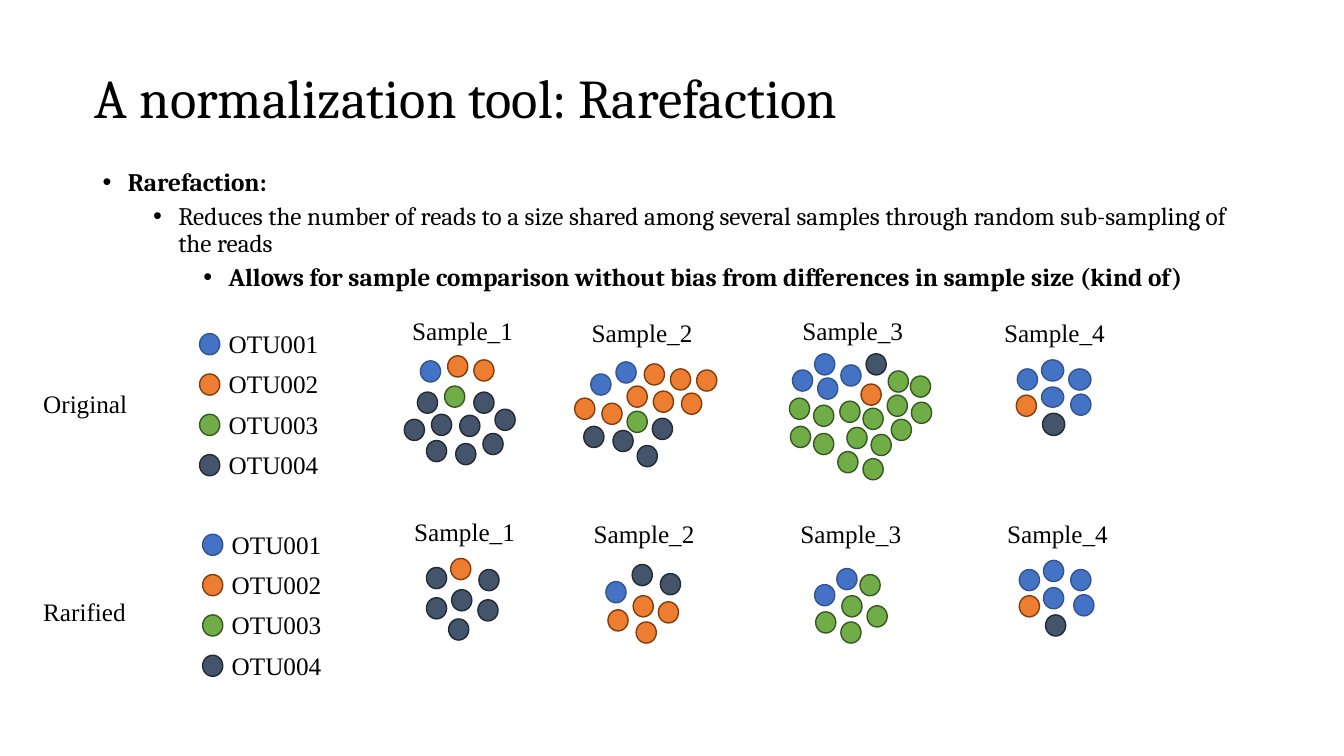
"""Build the slide that explains rarefaction with samples of coloured OTU dots."""

import dataclasses
import typing

import lxml.etree
import pptx
import pptx.dml.color
import pptx.enum.shapes
import pptx.enum.text
import pptx.oxml.ns
import pptx.util

SLIDE_WIDTH = pptx.util.Inches(13.33)
SLIDE_HEIGHT = pptx.util.Inches(7.5)
COLUMNS = 133.3
ROWS = 75


@dataclasses.dataclass(frozen=True)
class Theme:
    """Hold the colours, fonts and type sizes of the slide."""

    ink: str = "000000"
    heading_font: str = "Cambria"
    label_font: str = "Times New Roman"
    title_size: float = 39
    text_size: float = 18
    outline: float = 1


class Otu(typing.NamedTuple):
    """Describe one taxonomic unit by name and dot colours."""

    name: str
    fill: str
    line: str


class Spot(typing.NamedTuple):
    """Place one dot by its left column and top row."""

    column: float
    row: float
    width: float = 2
    height: float = 2.1


class Point(typing.NamedTuple):
    """Describe one bullet of the explanation."""

    text: str
    bold: bool
    space_before: float


@dataclasses.dataclass(frozen=True)
class Sample:
    """Place a sample heading and list its dots in the order of OTUS."""

    name: str
    column: float
    row: float
    reads: tuple


@dataclasses.dataclass(frozen=True)
class Stage:
    """Describe one band of the slide: its name, legend and samples."""

    name: str
    name_row: float
    legend_column: float
    legend_row: float
    samples: tuple


THEME = Theme()
OTUS = (
    Otu("OTU001", "4472C4", "325491"),
    Otu("OTU002", "ED7D31", "843C0B"),
    Otu("OTU003", "70AD47", "385723"),
    Otu("OTU004", "44546A", "222A35"),
)
POINTS = (
    Point("Rarefaction:", True, 10),
    Point("Reduces the number of reads to a size shared among several samples "
          "through random sub-sampling of the reads", False, 5),
    Point("Allows for sample comparison without bias from differences in "
          "sample size (kind of)", True, 5),
)
STAGES = (
    Stage("Original", 38, 21.7, 32.1, (
        Sample("Sample_1", 39.9, 30.8, (
            ((41.7, 35.8),),
            ((44.4, 35.3), (47, 35.7)),
            ((44.1, 38.3),),
            ((41.4, 38.9), (47, 38.9), (42.8, 41.1), (45.6, 41.2), (40.1, 41.6),
             (42.3, 43.7), (45.2, 44), (47.9, 43), (49.1, 40.6)),
        )),
        Sample("Sample_2", 57.7, 31, (
            ((58.6, 37.1), (61.1, 35.9)),
            ((63.9, 36.1), (66.5, 36.6), (62.2, 38.3), (64.8, 38.8), (57, 39.5),
             (59.7, 40), (67.6, 39), (69.1, 36.7)),
            ((62.2, 40.8),),
            ((57.9, 42.3), (60.8, 42.7), (64.7, 41.5), (63.2, 44.2)),
        )),
        Sample("Sample_3", 78.6, 30.8, (
            ((78.6, 36.7), (80.8, 35.1), (83.4, 36.2), (81.1, 37.5)),
            ((85.4, 38.1),),
            ((78.3, 39.5), (80.7, 40.2), (78.4, 42.3), (80.7, 43), (83.3, 39.8),
             (85.6, 40.5), (84, 42.4), (86.4, 43.1), (88, 39.2), (90.4, 39.9),
             (88.4, 41.6), (88.1, 36.8), (90.3, 37.3), (83.1, 44.8), (85.6, 45.5)),
            ((85.9, 35.1),),
        )),
        Sample("Sample_4", 98.6, 31, (
            ((100.9, 36.6), (103.3, 35.7, 2.2), (103.3, 38.4, 2.2, 2),
             (106, 36.6, 2.2), (106.2, 39.1)),
            ((100.8, 39.2),),
            (),
            ((103.4, 41, 2.2, 2.2),),
        )),
    )),
    Stage("Rarified", 58.7, 22, 52, (
        Sample("Sample_1", 40.1, 50.7, (
            (),
            ((44.7, 55.4),),
            (),
            ((42.3, 56.3), (47.5, 56.5), (42.3, 59.3), (44.5, 61.4), (47.4, 59.5),
             (44.8, 58.5)),
        )),
        Sample("Sample_2", 57.9, 50.9, (
            ((60.1, 57.7),),
            ((63.1, 61.7), (65.3, 59.7), (60.3, 60.5), (62.8, 59.1)),
            (),
            ((65.5, 56.9), (62.7, 56)),
        )),
        Sample("Sample_3", 78.4, 50.9, (
            ((80.8, 58), (83, 56.4)),
            (),
            ((80.9, 60.7), (83.5, 59.1), (83.4, 61.7), (85.3, 57), (86, 60.1)),
            (),
        )),
        Sample("Sample_4", 98.9, 50.9, (
            ((101.1, 56.5), (103.5, 55.6), (103.5, 58.3), (106.2, 56.5), (106.5, 59)),
            ((101.1, 59.1),),
            (),
            ((103.7, 61),),
        )),
    )),
)


def cells(column: float, row: float, width: float, height: float) -> tuple:
    """Turn grid columns and rows into a left, top, width and height."""
    across, down = SLIDE_WIDTH / COLUMNS, SLIDE_HEIGHT / ROWS
    return tuple(pptx.util.Emu(round(length)) for length in
                 (column * across, row * down, width * across, height * down))


def write(paragraph, text: str, *, font: str = THEME.label_font, size: float = THEME.text_size,
          bold: bool = False, line_spacing: float = 1, space_before: float = 0) -> None:
    """Fill a paragraph with formatted text."""
    paragraph.alignment = pptx.enum.text.PP_ALIGN.LEFT
    paragraph.line_spacing = line_spacing
    paragraph.space_before = pptx.util.Pt(space_before)
    run = paragraph.add_run()
    run.text = text
    run.font.name = font
    run.font.size = pptx.util.Pt(size)
    run.font.bold = bold
    run.font.color.rgb = pptx.dml.color.RGBColor.from_string(THEME.ink)


def add_bullet(paragraph, level: int) -> None:
    """Give a paragraph a hanging bullet at its level."""
    paragraph.level = level
    properties = paragraph._p.get_or_add_pPr()
    properties.set("marL", str(pptx.util.Inches(0.25 + 0.5 * level)))
    properties.set("indent", str(pptx.util.Inches(-0.25)))
    qn = pptx.oxml.ns.qn
    lxml.etree.SubElement(properties, qn("a:buFont"), typeface="Arial")
    lxml.etree.SubElement(properties, qn("a:buChar"), char="•")


def add_title(slide) -> None:
    """Move and format the title placeholder."""
    title = slide.shapes.title
    title.left, title.top, title.width, title.height = cells(8.4, 6, 97.1, 8.1)
    title.text_frame.auto_size = pptx.enum.text.MSO_AUTO_SIZE.NONE
    title.text_frame.vertical_anchor = pptx.enum.text.MSO_ANCHOR.MIDDLE
    write(title.text_frame.paragraphs[0], "A normalization tool: Rarefaction",
          font=THEME.heading_font, size=THEME.title_size, line_spacing=0.9)


def add_explanation(slide) -> None:
    """Add the bullets, each one level deeper than the last."""
    frame = slide.shapes.add_textbox(*cells(9.2, 16.3, 115, 18.5)).text_frame
    frame.word_wrap = True
    for level, point in enumerate(POINTS):
        paragraph = frame.add_paragraph() if level else frame.paragraphs[0]
        write(paragraph, point.text, font=THEME.heading_font, bold=point.bold,
              line_spacing=0.9, space_before=point.space_before)
        add_bullet(paragraph, level)


def add_label(slide, text: str, column: float, row: float) -> None:
    """Add a one-line label."""
    frame = slide.shapes.add_textbox(*cells(column, row, 14.5, 4)).text_frame
    frame.word_wrap = True
    frame.auto_size = pptx.enum.text.MSO_AUTO_SIZE.SHAPE_TO_FIT_TEXT
    write(frame.paragraphs[0], text)


def add_dot(slide, otu: Otu, spot: Spot) -> None:
    """Draw one read as a dot in the colours of its OTU."""
    dot = slide.shapes.add_shape(pptx.enum.shapes.MSO_SHAPE.OVAL, *cells(*spot))
    dot.shadow.inherit = False
    dot.fill.solid()
    dot.fill.fore_color.rgb = pptx.dml.color.RGBColor.from_string(otu.fill)
    dot.line.color.rgb = pptx.dml.color.RGBColor.from_string(otu.line)
    dot.line.width = pptx.util.Pt(THEME.outline)


def add_stage(slide, stage: Stage) -> None:
    """Draw a stage with its name, legend and samples."""
    add_label(slide, stage.name, 3.3, stage.name_row)
    for index, otu in enumerate(OTUS):
        row = stage.legend_row + 4 * index
        add_dot(slide, otu, Spot(stage.legend_column - 1.9, row + 1))
        add_label(slide, otu.name, stage.legend_column, row)
    for sample in stage.samples:
        add_label(slide, sample.name, sample.column, sample.row)
        for otu, spots in zip(OTUS, sample.reads):
            for spot in spots:
                add_dot(slide, otu, Spot(*spot))


def main() -> None:
    """Build and save the presentation."""
    deck = pptx.Presentation()
    deck.slide_width, deck.slide_height = SLIDE_WIDTH, SLIDE_HEIGHT
    slide = deck.slides.add_slide(deck.slide_layouts.get_by_name("Title Only"))
    add_title(slide)
    add_explanation(slide)
    for stage in STAGES:
        add_stage(slide, stage)
    deck.save("out.pptx")


if __name__ == "__main__":
    main()
